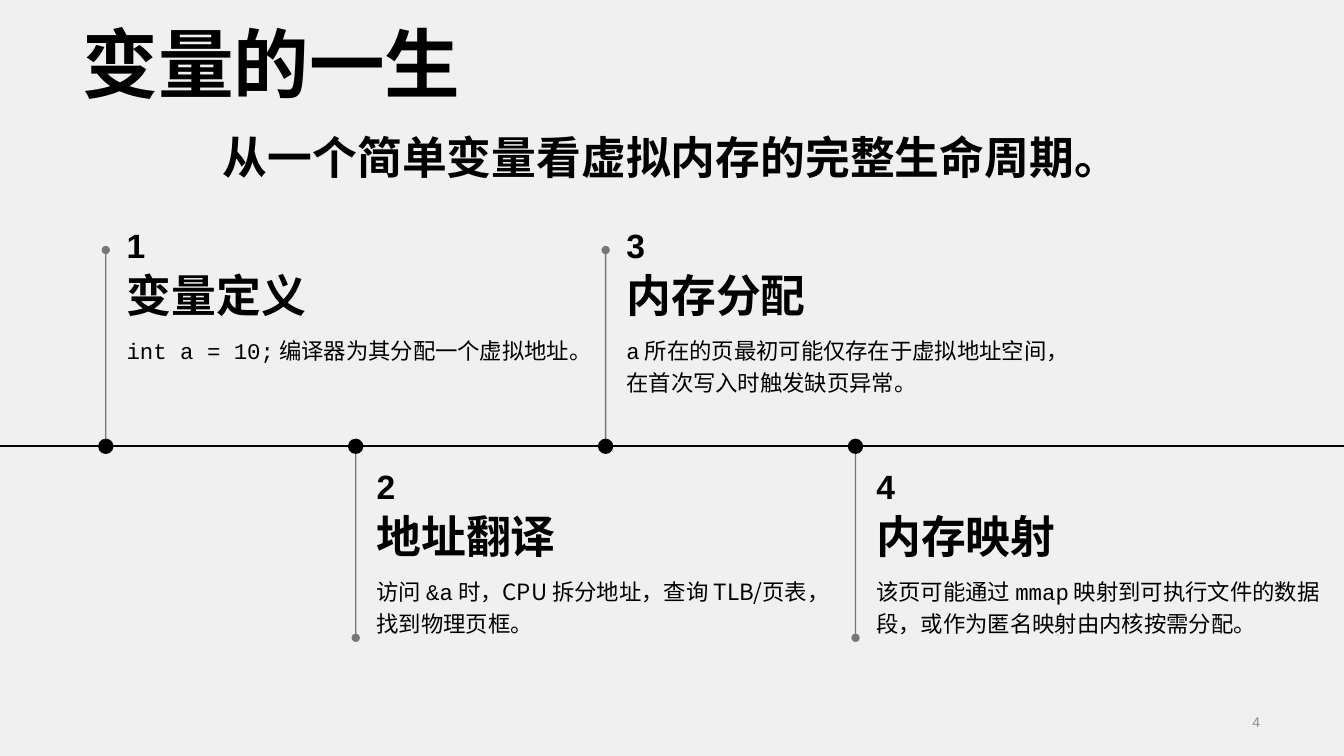
from dataclasses import dataclass

from lxml import etree
from pptx import Presentation
from pptx import util as u
from pptx.dml.color import RGBColor
from pptx.enum import shapes, text
from pptx.oxml.ns import qn


@dataclass(frozen=True)
class Theme:
    background: str = "F0F0F0"
    ink: str = "000000"
    muted: str = "8C8C8C"
    cjk: str = "Noto Sans CJK SC"
    latin: str = "Arial"
    code: str = "Courier New"
    title: float = 54
    heading: float = 32
    number: float = 24
    body: float = 16
    footer: float = 10


@dataclass(frozen=True)
class Stage:
    heading: str
    body: tuple[tuple[str, str], ...]  # (text, font) runs


T = Theme()
STAGES = (
    Stage("变量定义", (("int a = 10;", T.code), (" 编译器为其分配一个虚拟地址。", T.cjk))),
    Stage("地址翻译", (("访问 ", T.cjk), ("&a", T.code),
                   (" 时，CPU 拆分地址，查询 TLB/页表，找到物理页框。", T.cjk))),
    Stage("内存分配", (("a", T.code),
                   (" 所在的页最初可能仅存在于虚拟地址空间，在首次写入时触发缺页异常。", T.cjk))),
    Stage("内存映射", (("该页可能通过 ", T.cjk), ("mmap", T.code),
                   (" 映射到可执行文件的数据段，或作为匿名映射由内核按需分配。", T.cjk))),
)
WIDTH, HEIGHT = 960, 540
AXIS_Y = 318.8
FIRST_X, STEP_X = 75.6, 178.5
LOWER_SHIFT = 172  # from texts above the axis to texts below it
DOT = 11

prs = Presentation()
prs.slide_width, prs.slide_height = u.Pt(WIDTH), u.Pt(HEIGHT)
s = prs.slides.add_slide(prs.slide_layouts[6])
s.background.fill.solid()
s.background.fill.fore_color.rgb = RGBColor.from_string(T.background)


def add_text(runs: str | tuple[tuple[str, str], ...], x: float, y: float, w: float, h: float, *,
             size: float, font: str = T.cjk, color: str = T.ink, bold: bool = False,
             align: text.PP_ALIGN = text.PP_ALIGN.LEFT,
             anchor: text.MSO_ANCHOR = text.MSO_ANCHOR.TOP, spacing: float = 1.0) -> None:
    tf = s.shapes.add_textbox(u.Pt(x), u.Pt(y), u.Pt(w), u.Pt(h)).text_frame
    tf.word_wrap = True
    tf.vertical_anchor = anchor
    p = tf.paragraphs[0]
    p.alignment = align
    p.line_spacing = spacing
    for words, face in ((runs, font),) if isinstance(runs, str) else runs:
        r = p.add_run()
        r.text = words
        r.font.size, r.font.bold, r.font.name = u.Pt(size), bold, face
        r.font.color.rgb = RGBColor.from_string(color)
        # East Asian typeface
        etree.SubElement(r.font._element, qn("a:ea"), typeface=face)


def add_line(x1: float, y1: float, x2: float, y2: float, *, width: float, stem: bool = False) -> None:
    cx = s.shapes.add_connector(shapes.MSO_CONNECTOR.STRAIGHT, u.Pt(x1), u.Pt(y1), u.Pt(x2), u.Pt(y2))
    cx.line.width = u.Pt(width)
    cx.line.color.rgb = RGBColor.from_string(T.ink)
    if stem:  # half transparent, with a round head
        ln = cx.line._get_or_add_ln()
        etree.SubElement(ln.find(".//" + qn("a:srgbClr")), qn("a:alpha"), val="50000")
        etree.SubElement(ln, qn("a:headEnd"), type="oval")
    etree.SubElement(cx._element.spPr, qn("a:effectLst"))


def add_dot(x: float, y: float) -> None:
    sp = s.shapes.add_shape(shapes.MSO_SHAPE.OVAL, u.Pt(x - DOT / 2), u.Pt(y - DOT / 2),
                            u.Pt(DOT), u.Pt(DOT))
    sp.shadow.inherit = False
    sp.fill.solid()
    sp.fill.fore_color.rgb = RGBColor.from_string(T.ink)
    sp.line.fill.background()


def add_stage(i: int, stage: Stage) -> None:
    x = FIRST_X + i * STEP_X
    below = i % 2 == 1
    dy = LOWER_SHIFT if below else 0
    add_line(x, 455.6 if below else 178.6, x, AXIS_Y, width=1, stem=True)
    add_dot(x, AXIS_Y)
    left = x + 7.8
    bottom = text.MSO_ANCHOR.BOTTOM
    add_text(str(i + 1), left, 154 + dy, 174, 39, size=T.number, font=T.latin, bold=True, anchor=bottom)
    add_text(stage.heading, left, 194.4 + dy, 288, 39, size=T.heading, bold=True, anchor=bottom)
    add_text(stage.body, left, 233.3 + dy, 332, 79, size=T.body, spacing=1.2)


# Title and subtitle
add_text("变量的一生", 51.8, 10, 855.4, 70.6, size=T.title, bold=True, anchor=text.MSO_ANCHOR.BOTTOM)
add_text("从一个简单变量看虚拟内存的完整生命周期。", 51.8, 89.3, 855.4, 49.7, size=T.heading,
         bold=True, align=text.PP_ALIGN.CENTER)

# Timeline
add_line(WIDTH, AXIS_Y, 0, AXIS_Y, width=1.5)
for index, item in enumerate(STAGES):
    add_stage(index, item)

# Page number
add_text("4", 619.2, 504.7, 288, 21.6, size=T.footer, font=T.latin, color=T.muted,
         align=text.PP_ALIGN.RIGHT, anchor=text.MSO_ANCHOR.MIDDLE)

prs.save("out.pptx")
